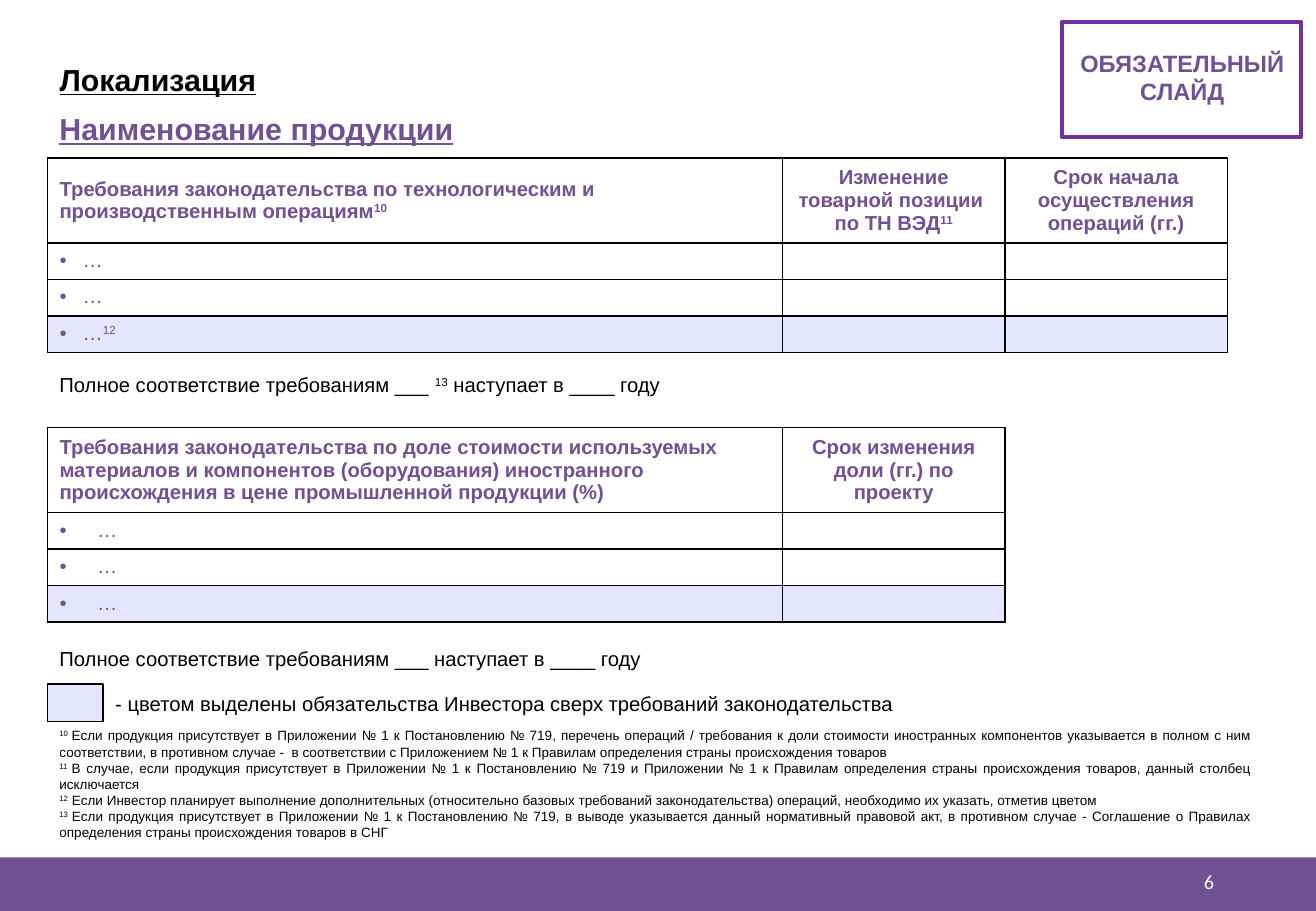
from lxml import etree
from pptx import Presentation
from pptx import util as u
from pptx.dml.color import RGBColor
from pptx.enum import shapes, text
from pptx.oxml.ns import qn

SCALE = 9144  # EMU in one px, 100 px to the inch
PURPLE, FRAME, LILAC = "725094", "7030A0", "E5E5FF"
BLACK, WHITE = "000000", "FFFFFF"
LEFT, CENTER, RIGHT, JUSTIFY = (
    text.PP_ALIGN.LEFT, text.PP_ALIGN.CENTER, text.PP_ALIGN.RIGHT, text.PP_ALIGN.JUSTIFY)
MIDDLE, TOP = text.MSO_ANCHOR.MIDDLE, text.MSO_ANCHOR.TOP
REQUIREMENT_W, TERM_W = 605, 183
HEADER_H, ROW_H = 70, 30

FOOTNOTES = [
    "^10 ^Если продукция присутствует в Приложении № 1 к Постановлению № 719, перечень операций / "
    "требования к доли стоимости иностранных компонентов указывается в полном с ним соответствии, "
    "в противном случае -  в соответствии с Приложением № 1 к Правилам определения страны "
    "происхождения товаров",
    "^11 ^В случае, если продукция присутствует в Приложении № 1 к Постановлению № 719 и "
    "Приложении № 1 к Правилам определения страны происхождения товаров, данный столбец исключается",
    "^12^ Если Инвестор планирует выполнение дополнительных (относительно базовых требований "
    "законодательства) операций, необходимо их указать, отметив цветом",
    "^13 ^Если продукция присутствует в Приложении № 1 к Постановлению № 719, в выводе указывается "
    "данный нормативный правовой акт, в противном случае - Соглашение о Правилах определения "
    "страны происхождения товаров в СНГ",
]


def px(n):
    return u.Emu(n * SCALE)


def color(value):
    return RGBColor.from_string(value)


def write(frame, lines, size=12, ink=BLACK, bold=False, underline=False,
          align=LEFT, font="Arial"):
    """Fill a text frame; pieces between ^ marks are superscript."""
    for i, line in enumerate(lines):
        para = frame.paragraphs[0] if i == 0 else frame.add_paragraph()
        para.alignment = align
        for j, piece in enumerate(line.split("^")):
            if not piece:
                continue
            run = para.add_run()
            run.text = piece
            run.font.size, run.font.name = u.Pt(size), font
            run.font.bold, run.font.underline = bold, underline
            run.font.color.rgb = color(ink)
            if j % 2:
                run.font._element.set("baseline", "30000")


def add_label(slide, box, lines, wrap=True, anchor=TOP, **style):
    frame = slide.shapes.add_textbox(*map(px, box)).text_frame
    frame.word_wrap = wrap
    frame.vertical_anchor = anchor
    write(frame, lines, **style)


def add_box(slide, box, fill=None, line=None, width=1):
    rect = slide.shapes.add_shape(shapes.MSO_SHAPE.RECTANGLE, *map(px, box))
    rect.shadow.inherit = False
    if fill:
        rect.fill.solid()
        rect.fill.fore_color.rgb = color(fill)
    else:
        rect.fill.background()
    if line:
        rect.line.color.rgb = color(line)
        rect.line.width = u.Pt(width)
    else:
        rect.line.fill.background()


def add_bullet(para, indent):
    props = para._p.get_or_add_pPr()
    props.set("marL", str(px(indent)))
    props.set("indent", str(px(-indent)))
    tint = etree.SubElement(props, qn("a:buClr"))
    etree.SubElement(tint, qn("a:srgbClr"), val=PURPLE)
    etree.SubElement(props, qn("a:buFont"), typeface="Arial")
    etree.SubElement(props, qn("a:buChar"), char="•")


def format_cell(cell, fill):
    if fill:
        cell.fill.solid()
        cell.fill.fore_color.rgb = color(fill)
    else:
        cell.fill.background()
    props = cell._tc.get_or_add_tcPr()
    for i, side in enumerate(("lnL", "lnR", "lnT", "lnB")):
        border = etree.Element(qn("a:" + side), w=str(u.Pt(1)))
        solid = etree.SubElement(border, qn("a:solidFill"))
        etree.SubElement(solid, qn("a:srgbClr"), val=BLACK)
        props.insert(i, border)


def add_requirements(slide, top, headers, items, indent):
    """Header row, then one bullet a row; the last row is highlighted."""
    widths = [REQUIREMENT_W] + [TERM_W] * (len(headers) - 1)
    heights = [HEADER_H] + [ROW_H] * len(items)
    table = slide.shapes.add_table(
        len(heights), len(widths),
        *map(px, (39, top, sum(widths), sum(heights)))).table
    table.first_row = table.horz_banding = False
    for column, width in zip(table.columns, widths):
        column.width = px(width)
    for row, height in zip(table.rows, heights):
        row.height = px(height)

    for c, lines in enumerate(headers):
        header = table.cell(0, c)
        header.vertical_anchor = MIDDLE
        write(header.text_frame, lines, ink=PURPLE, bold=True,
              align=CENTER if c else LEFT)
        format_cell(header, None)

    for r, item in enumerate(items, 1):
        for c in range(len(headers)):
            cell = table.cell(r, c)
            para = cell.text_frame.paragraphs[0]
            if c == 0:
                write(cell.text_frame, [item], ink=PURPLE)
                add_bullet(para, indent)
            else:  # keeps empty cells at the row height
                etree.SubElement(para._p, qn("a:endParaRPr"), sz="1200")
            format_cell(cell, LILAC if r == len(items) else None)


def main():
    prs = Presentation()
    prs.slide_width, prs.slide_height = px(1083), px(750)
    slide = prs.slides.add_slide(prs.slide_layouts[5])

    # Footer band and page number
    add_box(slide, (0, 706, 1083, 44), fill=PURPLE)
    add_label(slide, (765, 706, 244, 40), ["6"], anchor=MIDDLE,
              ink=WHITE, align=RIGHT, font="Calibri")

    # Title and product name
    title = slide.shapes.title
    title.left, title.top, title.width, title.height = map(px, (39, 45, 747, 40))
    title.text_frame.vertical_anchor = TOP
    title.text_frame.auto_size = text.MSO_AUTO_SIZE.NONE
    write(title.text_frame, ["Локализация"], size=18, bold=True, underline=True)
    add_label(slide, (39, 86, 348, 40), ["Наименование продукции"], wrap=False,
              size=18, ink=PURPLE, bold=True, underline=True)

    # Mandatory slide stamp
    add_box(slide, (874, 18, 197, 95), line=FRAME, width=2.25)
    add_label(slide, (878, 35, 190, 57), ["ОБЯЗАТЕЛЬНЫЙ", "СЛАЙД"], wrap=False,
              size=14, ink=PURPLE, bold=True, align=CENTER)

    # Technological operations
    add_requirements(slide, 130, [
        ["Требования законодательства по технологическим и производственным операциям^10^"],
        ["Изменение товарной позиции ", "по ТН ВЭД^11^"],
        ["Срок начала осуществления операций (гг.)"],
    ], ["…", "…", "…^12^"], indent=19)
    add_label(slide, (39, 302, 1002, 30),
              ["Полное соответствие требованиям ___ ^13^ наступает в ____ году"])

    # Share of foreign materials
    add_requirements(slide, 352, [
        ["Требования законодательства по доле стоимости используемых материалов и компонентов "
         "(оборудования) иностранного происхождения в цене промышленной продукции (%)"],
        ["Срок изменения доли (гг.) по проекту"],
    ], ["…"] * 3, indent=31)
    add_label(slide, (39, 527, 1002, 30),
              ["Полное соответствие требованиям ___ наступает в ____ году"])

    # Colour key and footnotes
    add_box(slide, (39, 563, 46, 31), fill=LILAC, line=BLACK)
    add_label(slide, (85, 564, 998, 30),
              ["- цветом выделены обязательства Инвестора сверх требований законодательства"])
    add_label(slide, (39, 594, 1002, 104), FOOTNOTES, size=8, align=JUSTIFY)

    prs.save("out.pptx")


if __name__ == "__main__":
    main()
